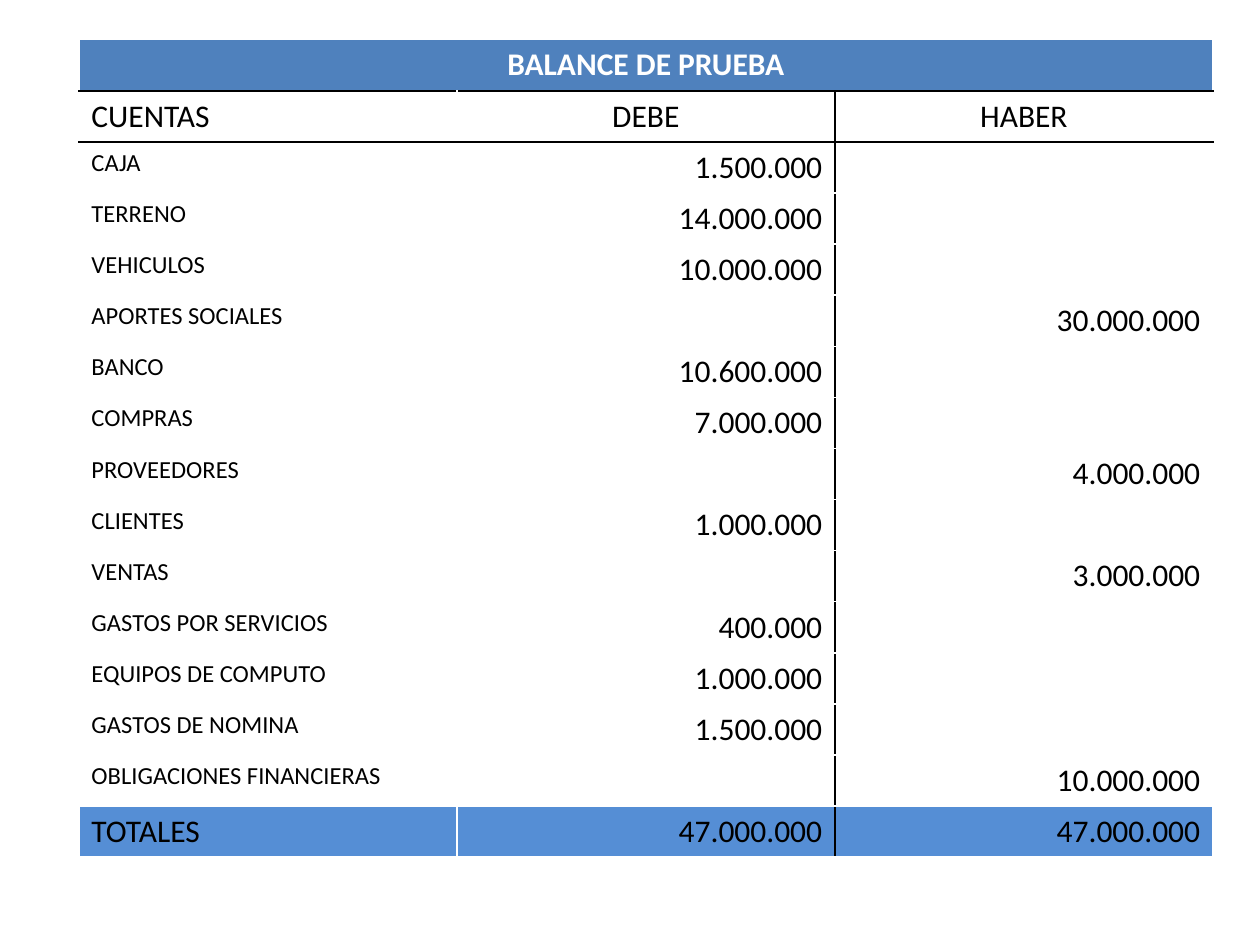
"""Build a trial balance slide with one table of accounts, debits and credits."""
from lxml.etree import SubElement
from pptx import Presentation
from pptx.dml.color import RGBColor
from pptx.enum.text import PP_ALIGN
from pptx.oxml.ns import qn
from pptx.util import Cm, Pt

WHITE = RGBColor(0xFF, 0xFF, 0xFF)
BLACK = RGBColor(0x00, 0x00, 0x00)
HEADER_BLUE = RGBColor(0x4F, 0x81, 0xBD)
TOTAL_BLUE = RGBColor(0x55, 0x8E, 0xD5)

ROWS = [
    ("BALANCE DE PRUEBA", "", ""),
    ("CUENTAS", "DEBE", "HABER"),
    ("CAJA", "1.500.000", ""),
    ("TERRENO", "14.000.000", ""),
    ("VEHICULOS", "10.000.000", ""),
    ("APORTES SOCIALES", "", "30.000.000"),
    ("BANCO", "10.600.000", ""),
    ("COMPRAS", "7.000.000", ""),
    ("PROVEEDORES", "", "4.000.000"),
    ("CLIENTES", "1.000.000", ""),
    ("VENTAS", "", "3.000.000"),
    ("GASTOS POR SERVICIOS", "400.000", ""),
    ("EQUIPOS DE COMPUTO", "1.000.000", ""),
    ("GASTOS DE NOMINA", "1.500.000", ""),
    ("OBLIGACIONES FINANCIERAS", "", "10.000.000"),
    ("TOTALES", "47.000.000", "47.000.000"),
]
TITLE, HEADER, TOTAL = 0, 1, len(ROWS) - 1
COL_WIDTH, ROW_HEIGHT = Cm(7.62), Cm(1.03)


def set_border(cell, side, color):
    ln = SubElement(cell._tc.get_or_add_tcPr(), qn(f"a:ln{side}"), w=str(Pt(1)))
    fill = SubElement(ln, qn("a:solidFill"))
    SubElement(fill, qn("a:srgbClr"), val=str(color))


prs = Presentation()
prs.slide_width, prs.slide_height = Cm(25.4), Cm(19.05)
s = prs.slides.add_slide(prs.slide_layouts[6])

table = s.shapes.add_table(
    len(ROWS), 3, Cm(1.59), Cm(0.8), COL_WIDTH * 3, ROW_HEIGHT * len(ROWS)
).table
table.first_row = False
table.horz_banding = False
for col in table.columns:
    col.width = COL_WIDTH
for row in table.rows:
    row.height = ROW_HEIGHT
table.cell(TITLE, 0).merge(table.cell(TITLE, 2))

for i, texts in enumerate(ROWS):
    for j, text in enumerate(texts):
        cell = table.cell(i, j)
        borders = {
            "L": j == 2 and i != TITLE,
            "R": j == 1 and i != TITLE,
            "T": i in (HEADER, HEADER + 1),
            "B": i in (TITLE, HEADER),
        }
        for side, dark in borders.items():
            set_border(cell, side, BLACK if dark else WHITE)

        if i in (TITLE, TOTAL):
            cell.fill.solid()
            cell.fill.fore_color.rgb = HEADER_BLUE if i == TITLE else TOTAL_BLUE
        else:
            cell.fill.background()

        if not text:
            continue
        p = cell.text_frame.paragraphs[0]
        if i == TITLE or (i == HEADER and j > 0):
            p.alignment = PP_ALIGN.CENTER
        else:
            p.alignment = PP_ALIGN.RIGHT if j > 0 else PP_ALIGN.LEFT
        r = p.add_run()
        r.text = text
        r.font.name = "Calibri"
        r.font.size = Pt(14) if j == 0 and HEADER < i < TOTAL else Pt(18)
        r.font.bold = i == TITLE
        r.font.color.rgb = WHITE if i == TITLE else BLACK

prs.save("out.pptx")
